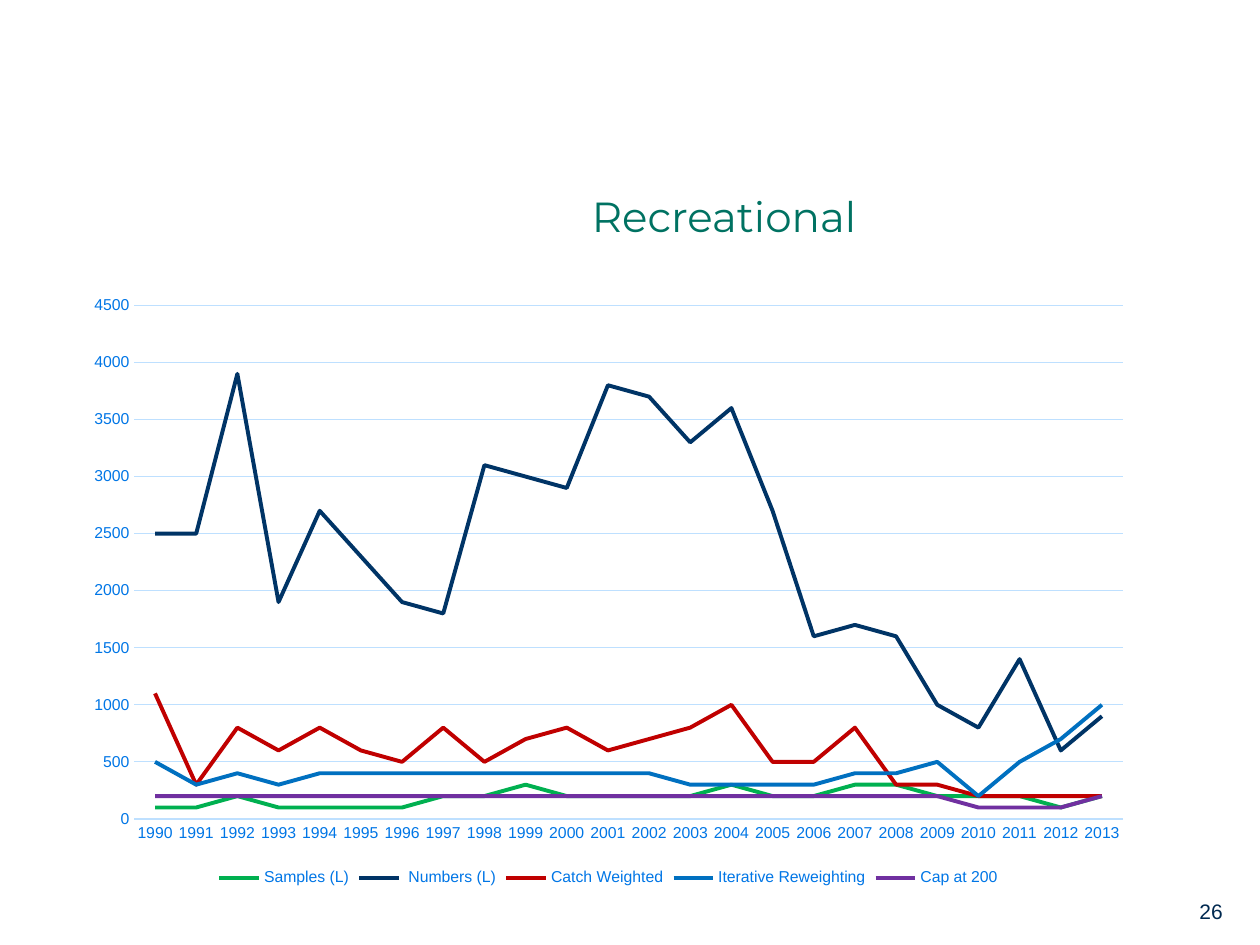
"""Build a slide with a line chart of recreational sample sizes by year."""
from pptx import Presentation
from pptx.chart.data import CategoryChartData
from pptx.dml.color import RGBColor
from pptx.enum import chart as charts, text
from pptx.util import Emu, Pt

SCALE = 914400 / 126
COLORS = {
    "title": "007262",
    "number": "002950",
    "label": "0076E6",
    "grid": "BEE0FF",
    "green": "00B050",
    "navy": "003466",
    "red": "C00000",
    "blue": "0070C0",
    "purple": "7030A0",
}


def px(*lengths):
    return [Emu(round(length * SCALE)) for length in lengths]


def add_text(content, box, size, color, font="Arial", align=text.PP_ALIGN.LEFT,
             anchor=text.MSO_ANCHOR.TOP):
    shape = slide.shapes.add_textbox(*px(*box))
    frame = shape.text_frame
    frame.word_wrap = True
    frame.vertical_anchor = anchor
    paragraph = frame.paragraphs[0]
    paragraph.alignment = align
    run = paragraph.add_run()
    run.text = content
    run.font.name = font
    run.font.size = Pt(size)
    run.font.color.rgb = RGBColor.from_string(COLORS[color])


presentation = Presentation()
presentation.slide_width, presentation.slide_height = px(1260, 945)
slide = presentation.slides.add_slide(presentation.slide_layouts[6])

add_text("26", (1187, 892, 105, 38), 12, "number")
add_text("Recreational ", (315, 158, 829, 116), 24, "title", font="Montserrat",
         align=text.PP_ALIGN.CENTER, anchor=text.MSO_ANCHOR.MIDDLE)

hundreds = [
    ("Samples (L)", "green",
     [1, 1, 2, 1, 1, 1, 1, 2, 2, 3, 2, 2, 2, 2, 3, 2, 2, 3, 3, 2, 2, 2, 1, 2]),
    (" Numbers (L)", "navy",
     [25, 25, 39, 19, 27, 23, 19, 18, 31, 30, 29, 38,
      37, 33, 36, 27, 16, 17, 16, 10, 8, 14, 6, 9]),
    ("Catch Weighted", "red",
     [11, 3, 8, 6, 8, 6, 5, 8, 5, 7, 8, 6, 7, 8, 10, 5, 5, 8, 3, 3, 2, 2, 2, 2]),
    ("Iterative Reweighting", "blue",
     [5, 3, 4, 3, 4, 4, 4, 4, 4, 4, 4, 4, 4, 3, 3, 3, 3, 4, 4, 5, 2, 5, 7, 10]),
    ("Cap at 200", "purple", [2] * 20 + [1, 1, 1, 2]),
]
data = CategoryChartData()
data.categories = [str(year) for year in range(1990, 2014)]
for name, color, values in hundreds:
    data.add_series(name, [value * 100 for value in values])

chart = slide.shapes.add_chart(
    charts.XL_CHART_TYPE.LINE, *px(73, 284, 1071, 608), data).chart
chart.has_title = False
chart.font.name = "Arial"
chart.font.size = Pt(10)
chart.font.color.rgb = RGBColor.from_string(COLORS["number"])
chart.has_legend = True
chart.legend.position = charts.XL_LEGEND_POSITION.BOTTOM
chart.legend.include_in_layout = False

years, counts = chart.category_axis, chart.value_axis
for axis in (years, counts):
    axis.major_tick_mark = charts.XL_TICK_MARK.NONE
    axis.minor_tick_mark = charts.XL_TICK_MARK.NONE
counts.minimum_scale, counts.maximum_scale, counts.major_unit = 0, 4500, 500
counts.has_major_gridlines = True
counts.format.line.fill.background()

for font in (years.tick_labels.font, counts.tick_labels.font, chart.legend.font):
    font.name = "Arial"
    font.size = Pt(9)
    font.color.rgb = RGBColor.from_string(COLORS["label"])

for line in (years.format.line, counts.major_gridlines.format.line):
    line.width = Pt(0.75)
    line.color.rgb = RGBColor.from_string(COLORS["grid"])

plot = chart.plots[0]
plot.vary_by_categories = False
for series, (name, color, values) in zip(plot.series, hundreds):
    series.smooth = False
    series.marker.style = charts.XL_MARKER_STYLE.NONE
    series.format.line.width = Pt(2.25)
    series.format.line.color.rgb = RGBColor.from_string(COLORS[color])

presentation.save("out.pptx")
